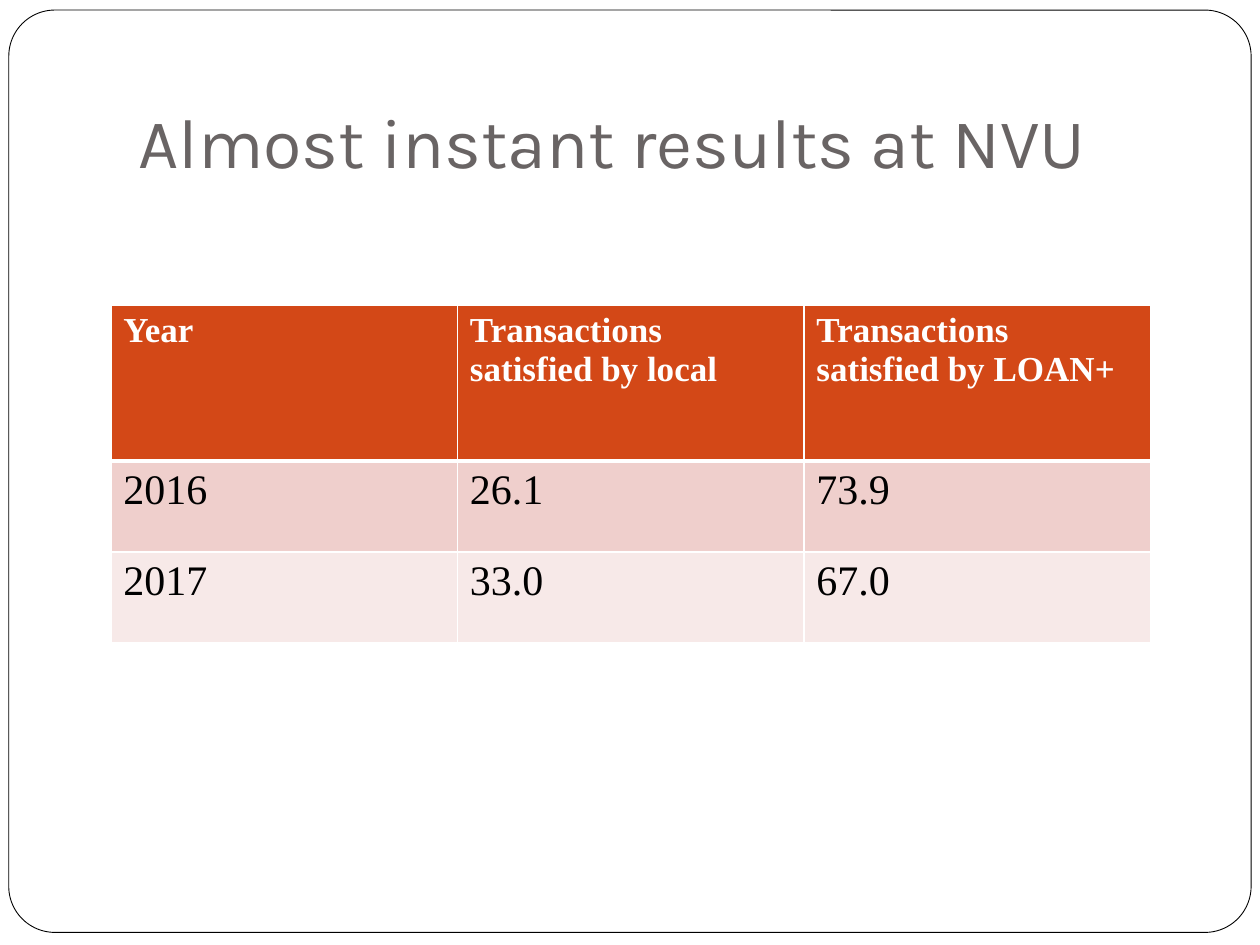
from lxml import etree
from pptx import Presentation
from pptx.dml.color import RGBColor
from pptx.enum.shapes import MSO_SHAPE
from pptx.enum.text import MSO_ANCHOR, PP_ALIGN
from pptx.oxml.ns import qn
from pptx.util import Inches, Pt

COLORS = {
    "white": "FFFFFF",
    "black": "000000",
    "title": "696464",
    "header": "D34817",
    "band_dark": "EFCFCC",
    "band_light": "F7E9E8",
}
ROWS = [
    ["Year", "Transactions satisfied by local", "Transactions satisfied by LOAN+"],
    ["2016", "26.1", "73.9"],
    ["2017", "33.0", "67.0"],
]
ROW_HEIGHTS = [1.24, 0.72, 0.72]


def color(name):
    return RGBColor.from_string(COLORS[name])


def add_span(para, text, font, size, tint, bold=False):
    span = para.add_run()
    span.text = text
    span.font.name = font
    span.font.size = Pt(size)
    span.font.bold = bold
    span.font.color.rgb = color(tint)


def add_frame(page, left, top, width, height):
    frame = page.shapes.add_shape(
        MSO_SHAPE.ROUNDED_RECTANGLE,
        Inches(left), Inches(top), Inches(width), Inches(height))
    frame.adjustments[0] = 0.05
    frame.shadow.inherit = False
    frame.fill.solid()
    frame.fill.fore_color.rgb = color("white")
    frame.line.color.rgb = color("black")
    frame.line.width = Pt(0.5)
    # Behind the title placeholder
    page.shapes._spTree.insert(2, frame._element)


def set_title(page, text, left, top, width, height):
    box = page.shapes.title
    box.left, box.top = Inches(left), Inches(top)
    box.width, box.height = Inches(width), Inches(height)
    frame = box.text_frame
    frame.word_wrap = True
    frame.vertical_anchor = MSO_ANCHOR.BOTTOM
    frame.margin_bottom = Inches(0.1)
    para = frame.paragraphs[0]
    para.alignment = PP_ALIGN.LEFT
    add_span(para, text, "Karla", 40, "title")


def set_borders(cell, widths):
    """Draw white borders; widths maps L, R, T, B (in that order) to points."""
    props = cell._tc.get_or_add_tcPr()
    for side, width in widths.items():
        line = etree.SubElement(props, qn(f"a:ln{side}"), w=str(Pt(width)))
        fill = etree.SubElement(line, qn("a:solidFill"))
        etree.SubElement(fill, qn("a:srgbClr"), val=COLORS["white"])


def add_results_table(page, left, top, width):
    table = page.shapes.add_table(
        len(ROWS), len(ROWS[0]), Inches(left), Inches(top),
        Inches(width), Inches(sum(ROW_HEIGHTS))).table
    for column in table.columns:
        column.width = Inches(width / len(ROWS[0]))
    fills = ["header", "band_dark", "band_light"]
    for r, texts in enumerate(ROWS):
        table.rows[r].height = Inches(ROW_HEIGHTS[r])
        is_header = r == 0
        size, tint = (20, "white") if is_header else (24, "black")
        for c, text in enumerate(texts):
            cell = table.cell(r, c)
            set_borders(cell, {"L": 1, "R": 1, "T": 3 if r == 1 else 1,
                               "B": 3 if is_header else 1})
            cell.fill.solid()
            cell.fill.fore_color.rgb = color(fills[r])
            add_span(cell.text_frame.paragraphs[0], text,
                     "Times New Roman", size, tint, is_header)


def main():
    deck = Presentation()
    deck.slide_width, deck.slide_height = Inches(10), Inches(7.5)
    page = deck.slides.add_slide(deck.slide_layouts[5])
    add_frame(page, 0.07, 0.08, 9.86, 7.32)
    set_title(page, "Almost instant results at NVU", 1, 0.3, 8.5, 1.25)
    add_results_table(page, 0.88, 2.42, 8.25)
    deck.save("out.pptx")


if __name__ == "__main__":
    main()
